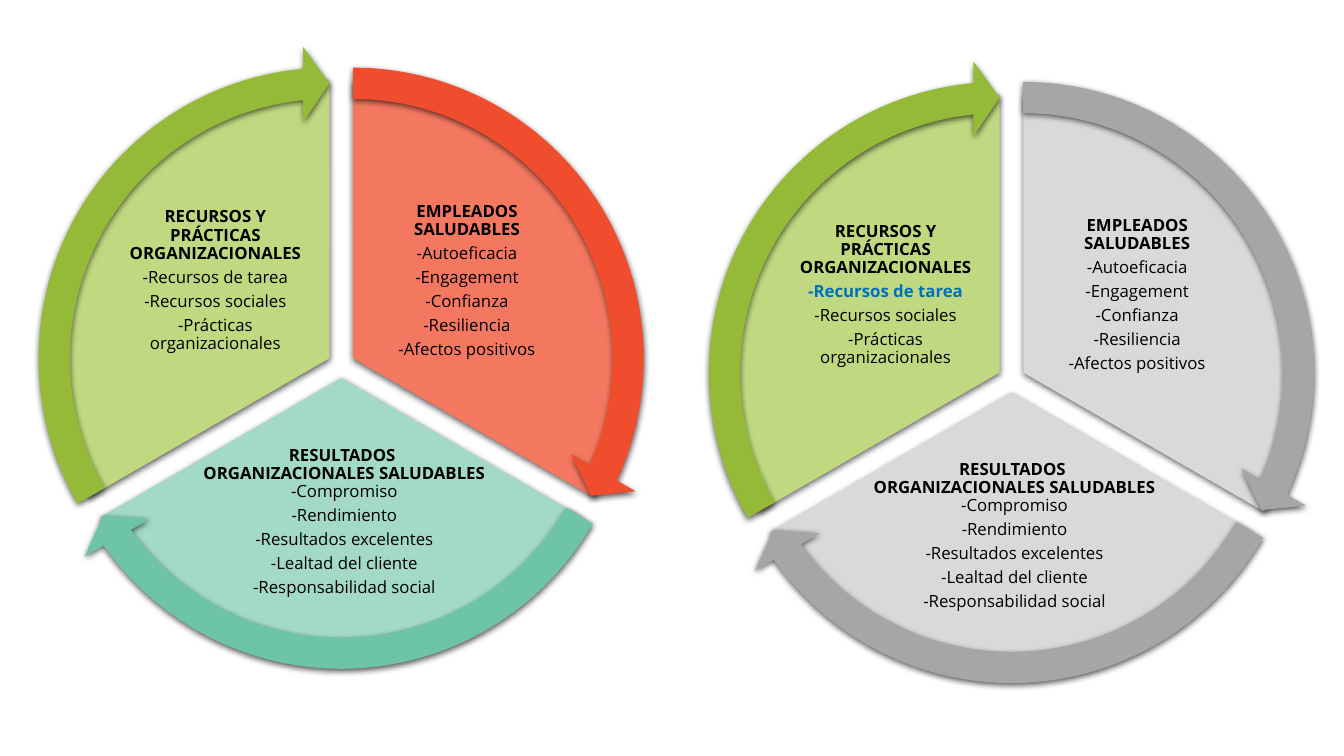
import math

from lxml import etree
from pptx import Presentation
from pptx.dml.color import RGBColor
from pptx.enum import shapes, text
from pptx.oxml.ns import qn
from pptx.util import Cm, Pt

RADIUS = 7
# Angle and distance from the centre: two Bézier handles and the end of a 60° arc
ARC_POINTS = [(19.66, 7.43), (40.34, 7.43), (60, RADIUS)]
ARROW_SIZE = 15.75
ARROW_ENDS = {270: (14.73, 161.99), 30: (86.72, 18), 150: (158.73, 90)}
HIGHLIGHT = "-Recursos de tarea"

# Centre, start angle, insets (left, top, right, bottom), headings, items
SECTORS = [
    ((8.9, 9.03), 270, (7.42, 3, 1.68, 6.91),
     ["EMPLEADOS SALUDABLES"],
     ["-Autoeficacia", "-Engagement", "-Confianza", "-Resiliencia",
      "-Afectos positivos"]),
    ((8.6, 9.53), 30, (3.38, 9.12, 3.22, 1.88),
     ["RESULTADOS ", "ORGANIZACIONALES SALUDABLES"],
     ["-Compromiso", "-Rendimiento", "-Resultados excelentes",
      "-Lealtad del cliente", "-Responsabilidad social"]),
    ((8.3, 9.03), 150, (1.68, 3, 7.42, 6.91),
     ["RECURSOS Y PRÁCTICAS ORGANIZACIONALES"],
     [HIGHLIGHT, "-Recursos sociales", "-Prácticas organizacionales"]),
]

# Offset, (sector, arrow) colours in sector order, colour of the highlighted item
WHEELS = [
    ((0, 0),
     [("F3785F", "EF4D2D"), ("A3D9C7", "6EC4A7"), ("C0D981", "95BA38")], None),
    ((16.89, 0.36),
     [("D9D9D9", "A6A6A6"), ("D9D9D9", "A6A6A6"), ("C0D981", "95BA38")], "0070C0"),
]


def color(value):
    return RGBColor.from_string(value)


def paint(shape, fill):
    """Fill the shape, drop its outline and give it a soft shadow below."""
    shape.fill.solid()
    shape.fill.fore_color.rgb = color(fill)
    shape.line.fill.background()
    shape.shadow.inherit = False
    effects = shape._element.spPr.find(qn("a:effectLst"))
    shadow = etree.SubElement(effects, qn("a:outerShdw"), blurRad=str(Pt(4.5)),
                              dist=str(Pt(1.5)), dir="5400000", rotWithShape="0")
    black = etree.SubElement(shadow, qn("a:srgbClr"), val="000000")
    etree.SubElement(black, qn("a:alpha"), val="63000")


deck = Presentation()
deck.slide_width, deck.slide_height = Cm(33.87), Cm(19.05)
page = deck.slides.add_slide(deck.slide_layouts[6])

for (shift_x, shift_y), fills, highlight in WHEELS:
    for ((x, y), start, insets, headings, items), (fill, _) in zip(SECTORS, fills):
        x, y = x + shift_x, y + shift_y
        polar = [(start, RADIUS)] + [(start + half + angle, distance)
                                     for half in (0, 60)
                                     for angle, distance in ARC_POINTS]
        points = [(Cm(x + distance * math.cos(math.radians(angle))),
                   Cm(y + distance * math.sin(math.radians(angle))))
                  for angle, distance in polar]
        builder = page.shapes.build_freeform(*points[0])
        builder.add_line_segments(points[1:] + [(Cm(x), Cm(y))], close=True)
        sector = builder.convert_to_shape()

        # Let the frame span the whole circle, so the insets count from its edges
        left, top, size = Cm(x - RADIUS), Cm(y - RADIUS), Cm(2 * RADIUS)
        outline = next(sector._element.iter(qn("a:path")))
        for point in outline.iter(qn("a:pt")):
            point.set("x", str(int(point.get("x")) + sector.left - left))
            point.set("y", str(int(point.get("y")) + sector.top - top))
        outline.set("w", str(size))
        outline.set("h", str(size))
        sector.left, sector.top, sector.width, sector.height = left, top, size, size

        # Join each three line segments of the arc into one curve
        segments = outline.findall(qn("a:lnTo"))
        for first in (0, 3):
            curve = etree.Element(qn("a:cubicBezTo"))
            segments[first].addprevious(curve)
            for segment in segments[first:first + 3]:
                curve.append(segment[0])
                outline.remove(segment)
        paint(sector, fill)

        frame = sector.text_frame
        frame.word_wrap = True
        frame.vertical_anchor = text.MSO_ANCHOR.MIDDLE
        (frame.margin_left, frame.margin_top,
         frame.margin_right, frame.margin_bottom) = map(Cm, insets)
        for index, line in enumerate(headings + items):
            para = frame.add_paragraph() if index else frame.paragraphs[0]
            para.alignment = text.PP_ALIGN.CENTER
            para.line_spacing = 0.9
            para.space_after = Pt(0 if len(headings) > 1 and line in headings else 4.2)
            span = para.add_run()
            span.text = line
            marked = highlight and line == HIGHLIGHT
            span.font.name = "Open Sans"
            span.font.size = Pt(12)
            span.font.bold = bool(line in headings or marked)
            span.font.color.rgb = color(highlight if marked else "000000")

    for ((x, y), start, *_), (_, fill) in zip(SECTORS, fills):
        arrow = page.shapes.add_shape(
            shapes.MSO_SHAPE.CIRCULAR_ARROW,
            Cm(x + shift_x - ARROW_SIZE / 2), Cm(y + shift_y - ARROW_SIZE / 2),
            Cm(ARROW_SIZE), Cm(ARROW_SIZE))
        for index, value in enumerate((0.05, 3.28, *ARROW_ENDS[start], 0.06)):
            arrow.adjustments[index] = value
        paint(arrow, fill)

deck.save("out.pptx")
